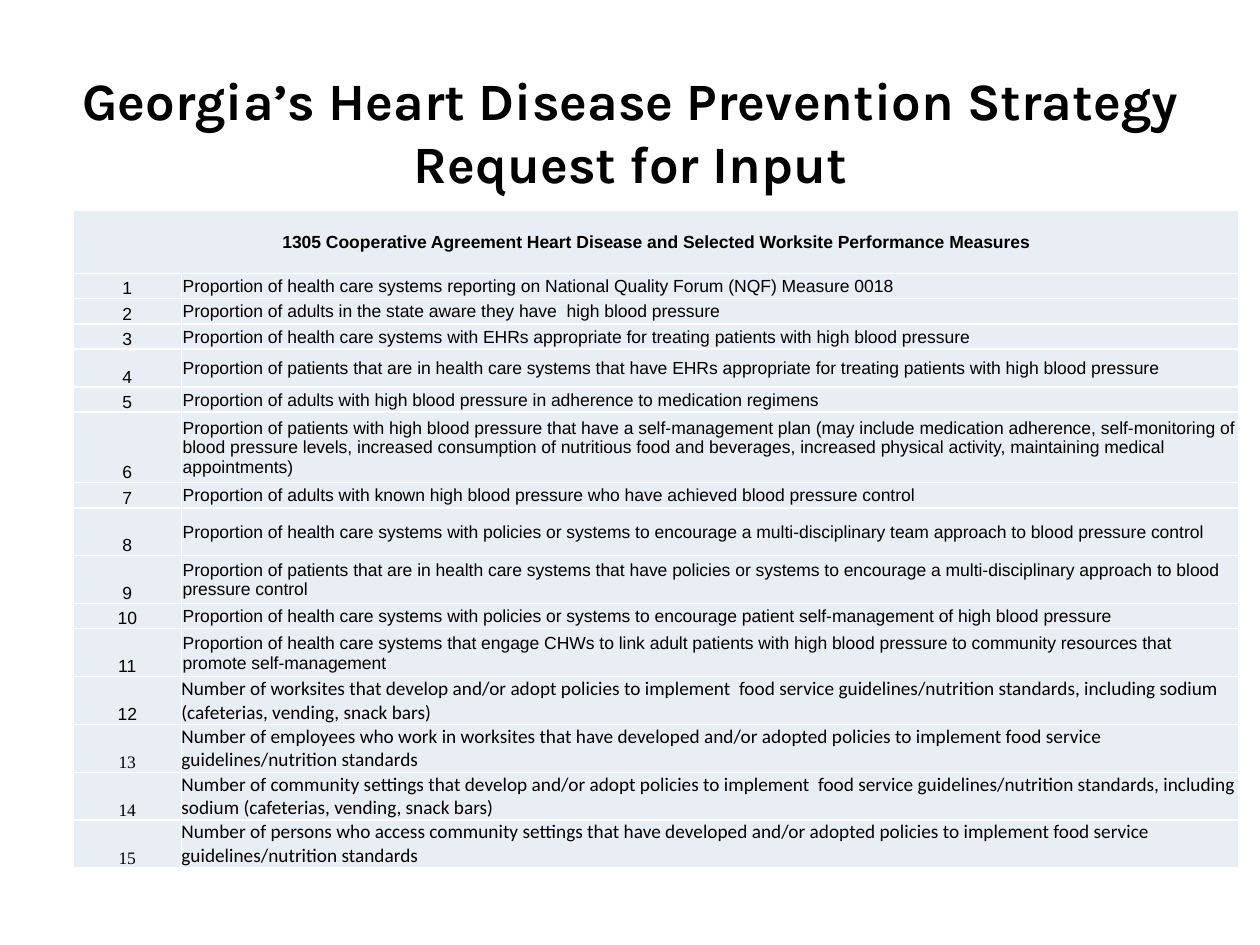
"""Build a slide listing heart disease performance measures in a numbered table."""
import pptx
import pptx.dml.color
import pptx.enum.text
import pptx.oxml
import pptx.oxml.ns
import pptx.util

Inches, Pt = pptx.util.Inches, pptx.util.Pt
ALIGN, ANCHOR = pptx.enum.text.PP_ALIGN, pptx.enum.text.MSO_ANCHOR
BLACK = pptx.dml.color.RGBColor(0x00, 0x00, 0x00)
WHITE = pptx.dml.color.RGBColor(0xFF, 0xFF, 0xFF)
PALE = pptx.dml.color.RGBColor(0xE9, 0xED, 0xF4)

TITLE = "Georgia’s Heart Disease Prevention Strategy\vRequest for Input"
HEAD = "1305 Cooperative Agreement Heart Disease and Selected Worksite Performance Measures"
HEALTH = [
    (0.2, "Proportion of health care systems reporting on National Quality Forum (NQF) Measure 0018"),
    (0.2, "Proportion of adults in the state aware they have  high blood pressure"),
    (0.2, "Proportion of health care systems with EHRs appropriate for treating patients with high blood pressure"),
    (0.3, "Proportion of patients that are in health care systems that have EHRs appropriate for treating "
          "patients with high blood pressure"),
    (0.2, "Proportion of adults with high blood pressure in adherence to medication regimens"),
    (0.56, "Proportion of patients with high blood pressure that have a self-management plan (may include "
           "medication adherence, self-monitoring of blood pressure levels, increased consumption of nutritious "
           "food and beverages, increased physical activity, maintaining medical appointments)"),
    (0.2, "Proportion of adults with known high blood pressure who have achieved blood pressure control"),
    (0.38, "Proportion of health care systems with policies or systems to encourage a multi-disciplinary team "
           "approach to blood pressure control"),
    (0.38, "Proportion of patients that are in health care systems that have policies or systems to encourage "
           "a multi-disciplinary approach to blood pressure control"),
    (0.2, "Proportion of health care systems with policies or systems to encourage patient self-management "
          "of high blood pressure"),
    (0.38, "Proportion of health care systems that engage CHWs to link adult patients with high blood pressure "
           "to community resources that promote self-management"),
]
WORK = [
    (0.38, "Number of worksites that develop and/or adopt policies to implement  food service "
           "guidelines/nutrition standards, including sodium (cafeterias, vending, snack bars)"),
    (0.38, "Number of employees who work in worksites that have developed and/or adopted policies to implement "
           "food service guidelines/nutrition standards"),
    (0.38, "Number of community settings that develop and/or adopt policies to implement  food service "
           "guidelines/nutrition standards, including sodium (cafeterias, vending, snack bars)"),
    (0.38, "Number of persons who access community settings that have developed and/or adopted policies to "
           "implement food service guidelines/nutrition standards"),
]
ROWS = HEALTH + WORK
COLS = [0.86, 8.39]
HEAD_HIGH = 0.5


def style(par, face, size, bold, align):
    par.alignment = align
    par.font.name, par.font.size = face, Pt(size)
    par.font.bold, par.font.color.rgb = bold, BLACK


def border(cell):
    props = cell._tc.get_or_add_tcPr()
    for spot, side in enumerate(("lnL", "lnR", "lnT", "lnB")):
        props.insert(spot, pptx.oxml.parse_xml(
            f'<a:{side} {pptx.oxml.ns.nsdecls("a")} w="{Pt(1)}"><a:solidFill>'
            f'<a:srgbClr val="{WHITE}"/></a:solidFill></a:{side}>'))


def fill(cell, text, face, size, align, anchor, inset=0.01, bold=False):
    cell.text = text
    cell.vertical_anchor = anchor
    cell.margin_left = cell.margin_right = cell.margin_top = Inches(inset)
    cell.margin_bottom = 0
    style(cell.text_frame.paragraphs[0], face, size, bold, align)


def main():
    deck = pptx.Presentation()
    deck.slide_width, deck.slide_height = Inches(10), Inches(7.5)
    slide = deck.slides.add_slide(deck.slide_layouts[5])

    title = slide.shapes.title
    title.left, title.top = Inches(0.17), Inches(0.5)
    title.width, title.height = Inches(9.67), Inches(1.08)
    title.text_frame.text = TITLE
    title.text_frame.vertical_anchor = ANCHOR.MIDDLE
    style(title.text_frame.paragraphs[0], "Karla", 30, True, ALIGN.CENTER)

    highs = [HEAD_HIGH] + [high for high, _ in ROWS]
    table = slide.shapes.add_table(len(highs), len(COLS), Inches(0.58), Inches(1.67),
                                   Inches(sum(COLS)), Inches(sum(highs))).table
    table.first_row = table.horz_banding = False
    for col, wide in zip(table.columns, COLS):
        col.width = Inches(wide)
    for row, high in zip(table.rows, highs):
        row.height = Inches(high)
    for cell in table.iter_cells():
        cell.fill.solid()
        cell.fill.fore_color.rgb = PALE
        border(cell)

    table.cell(0, 0).merge(table.cell(0, 1))
    fill(table.cell(0, 0), HEAD, "Arial", 10, ALIGN.CENTER, ANCHOR.MIDDLE, bold=True)
    for num, (_, text) in enumerate(ROWS, 1):
        health = num <= len(HEALTH)
        face = "Arial" if num <= len(HEALTH) + 1 else "Times New Roman"
        fill(table.cell(num, 0), str(num), face, 10, ALIGN.CENTER, ANCHOR.BOTTOM)
        fill(table.cell(num, 1), text, "Arial" if health else "Calibri", 10 if health else 11,
             ALIGN.LEFT, ANCHOR.MIDDLE, 0.01 if health else 0)

    deck.save("out.pptx")


if __name__ == "__main__":
    main()
